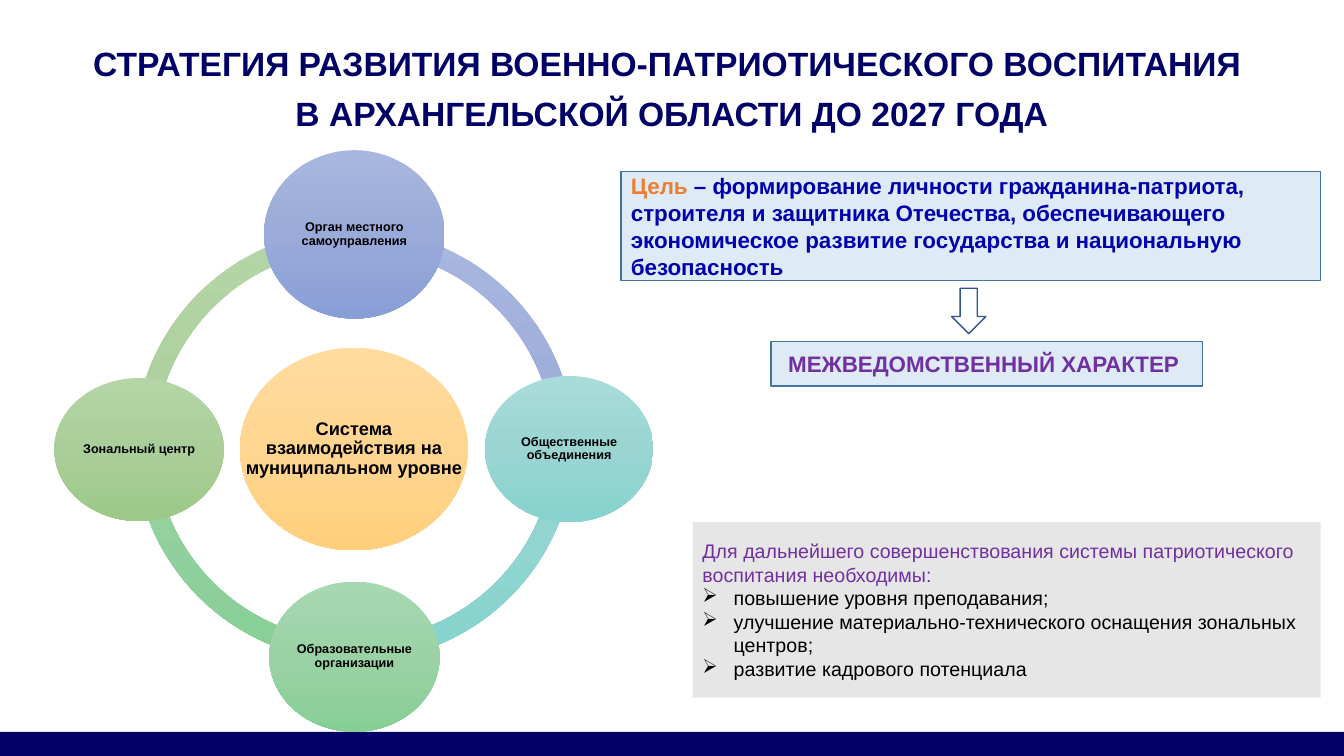
import copy

import lxml.etree
import pptx
import pptx.dml.color
import pptx.enum.shapes
import pptx.enum.text
import pptx.oxml.ns
import pptx.util

SHAPES = pptx.enum.shapes.MSO_SHAPE
ALIGN = pptx.enum.text.PP_ALIGN
ANCHOR = pptx.enum.text.MSO_ANCHOR

NAVY = "000066"
BLACK = "000000"
PURPLE = "7030A0"
PALE_BLUE = "DEEBF7"
PANEL_LINE = "43739E"
BLUE = ("A8B7DF", "9AABD9", "889ED7")
TEAL = ("A8DCD9", "9AD5D2", "87D3CF")
GREEN = ("A7D8B1", "9AD2A5", "87CE96")
OLIVE = ("B5D5A7", "AACE9A", "9CC987")
ORANGE = ("FFDB9E", "FFD590", "FFD07C")


def color(value):
    return pptx.dml.color.RGBColor.from_string(value)


def apply(target, values):
    for name, value in values.items():
        setattr(target, name, value)


class SlideBuilder:
    font_name = "Arial"

    def __init__(self, presentation):
        self.width = presentation.slide_width
        self.height = presentation.slide_height
        self.slide = presentation.slides.add_slide(presentation.slide_layouts[6])

    def place(self, area):
        left, top, width, height = area
        return [
            round(share * size / 100)
            for share, size in (
                (left, self.width),
                (top, self.height),
                (width, self.width),
                (height, self.height),
            )
        ]

    def shape(self, kind, area, fill, line=None, adjustments=()):
        shape = self.slide.shapes.add_shape(kind, *self.place(area))
        shape.shadow.inherit = False
        for index, value in enumerate(adjustments):
            shape.adjustments[index] = value
        if isinstance(fill, tuple):
            self.gradient(shape, fill)
        else:
            shape.fill.solid()
            shape.fill.fore_color.rgb = color(fill)
        if line:
            shape.line.color.rgb = color(line)
            shape.line.width = pptx.util.Pt(1)
        else:
            shape.line.fill.background()
        return shape

    def gradient(self, shape, shades):
        shape.fill.gradient()
        shape.fill.gradient_angle = 270
        stops = shape._element.spPr.find(".//" + pptx.oxml.ns.qn("a:gsLst"))
        stops.insert(1, copy.deepcopy(stops[0]))
        for index, stop in enumerate(shape.fill.gradient_stops):
            stop.position = index / 2
            stop.color.rgb = color(shades[index])

    def text_box(self, area, paragraphs, inset, anchor=ANCHOR.MIDDLE, **style):
        box = self.slide.shapes.add_textbox(*self.place(area))
        margin = pptx.util.Inches(inset)
        sides = ("left", "top", "right", "bottom")
        apply(box.text_frame, {f"margin_{side}": margin for side in sides})
        self.fill_text(box, paragraphs, anchor=anchor, **style)

    def fill_text(self, shape, paragraphs, size, bold=False, anchor=ANCHOR.MIDDLE, **layout):
        frame = shape.text_frame
        apply(frame, {"word_wrap": True, "vertical_anchor": anchor})
        for index, runs in enumerate(paragraphs):
            paragraph = frame.paragraphs[0] if index == 0 else frame.add_paragraph()
            apply(paragraph, {"alignment": ALIGN.LEFT, **layout})
            for text, tone in runs:
                run = paragraph.add_run()
                run.text = text
                apply(run.font, {
                    "name": self.font_name,
                    "size": pptx.util.Pt(size),
                    "bold": bold,
                })
                run.font.color.rgb = color(tone)

    def bullet(self, paragraph, indent=0.31):
        properties = paragraph._p.get_or_add_pPr()
        hanging = pptx.util.Inches(indent)
        properties.set("marL", str(hanging))
        properties.set("indent", str(-hanging))
        mark = lxml.etree.SubElement(properties, pptx.oxml.ns.qn("a:buChar"))
        mark.set("char", "➢")

    def circle(self, area, shades, label, size=9, inset=0.01):
        self.shape(SHAPES.OVAL, area, shades)
        self.text_box(area, [[(label, BLACK)]], inset, size=size, bold=True,
                      alignment=ALIGN.CENTER, line_spacing=0.9)


def add_heading(builder):
    lines = (
        "СТРАТЕГИЯ РАЗВИТИЯ ВОЕННО-ПАТРИОТИЧЕСКОГО ВОСПИТАНИЯ ",
        "В АРХАНГЕЛЬСКОЙ ОБЛАСТИ ДО 2027 ГОДА",
    )
    builder.text_box((6.9, 6.27, 86.18, 11.6), [[(line, NAVY)] for line in lines], 0,
                     anchor=ANCHOR.TOP, size=24, bold=True, alignment=ALIGN.CENTER,
                     line_spacing=0.9, space_before=pptx.util.Pt(10))
    builder.shape(SHAPES.RECTANGLE, (0, 96.8, 100, 3.2), NAVY)


def add_panels(builder):
    needs = builder.shape(SHAPES.RECTANGLE, (51.53, 69.07, 46.73, 23.2), "E7E6E6")
    builder.fill_text(needs, [
        [("Для дальнейшего совершенствования системы патриотического "
          "воспитания необходимы:", PURPLE)],
        [("повышение уровня преподавания;", BLACK)],
        [("улучшение материально-технического оснащения зональных центров;", BLACK)],
        [("развитие кадрового потенциала", BLACK)],
    ], size=14)
    for paragraph in needs.text_frame.paragraphs[1:]:
        builder.bullet(paragraph)

    goal = builder.shape(SHAPES.RECTANGLE, (46.2, 22.67, 52.05, 14.4), PALE_BLUE, PANEL_LINE)
    builder.fill_text(goal, [[
        ("Цель", "ED7D31"),
        (" – формирование личности гражданина-патриота, строителя и защитника "
         "Отечества, обеспечивающего экономическое развитие государства и "
         "национальную безопасность", "0000AC"),
    ]], size=16, bold=True)

    character = builder.shape(SHAPES.RECTANGLE, (57.38, 45.2, 32.1, 5.87), PALE_BLUE, PANEL_LINE)
    builder.fill_text(character, [[("МЕЖВЕДОМСТВЕННЫЙ ХАРАКТЕР ", PURPLE)]],
                      size=16, bold=True, alignment=ALIGN.CENTER)
    builder.shape(SHAPES.DOWN_ARROW, (70.8, 38.13, 2.55, 6), "FFFFFF", "2F5597")


def add_interaction_ring(builder):
    arcs = (
        (30.27, OLIVE, 108, 162),
        (29.2, GREEN, 53.97, 106.67),
        (29.2, TEAL, 1.33, 54.03),
        (30.27, BLUE, 162, 0),
    )
    for top, shades, start, end in arcs:
        builder.shape(SHAPES.BLOCK_ARC, (9.98, top, 32.78, 58.27), shades,
                      adjustments=(start, end, 0.046))

    builder.circle((17.85, 46, 16.95, 26.8), ORANGE,
                   "Система взаимодействия на муниципальном уровне", size=13, inset=0.02)
    participants = (
        ((19.65, 19.87, 13.43, 22.27), BLUE, "Орган местного самоуправления"),
        ((36.08, 49.73, 12.53, 19.33), TEAL, "Общественные объединения"),
        ((20.03, 76.93, 12.68, 19.87), GREEN, "Образовательные организации"),
        ((4.05, 50, 12.6, 18.93), OLIVE, "Зональный центр"),
    )
    for area, shades, label in participants:
        builder.circle(area, shades, label)


def main():
    presentation = pptx.Presentation()
    apply(presentation, {
        "slide_width": pptx.util.Inches(13.33),
        "slide_height": pptx.util.Inches(7.5),
    })
    builder = SlideBuilder(presentation)
    add_heading(builder)
    add_panels(builder)
    add_interaction_ring(builder)
    presentation.save("out.pptx")


if __name__ == "__main__":
    main()
